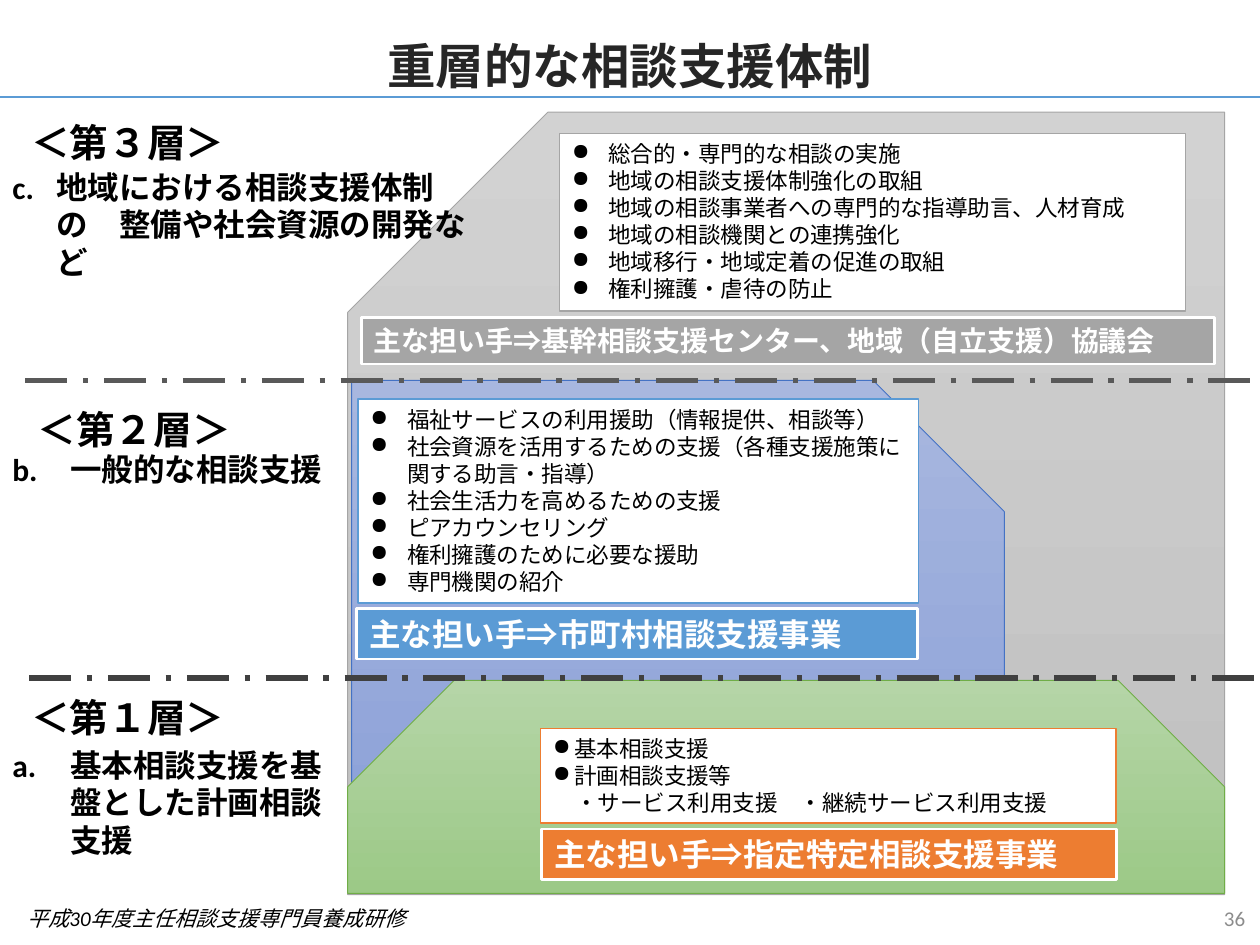
from lxml.etree import SubElement
from pptx import Presentation
from pptx.dml.color import RGBColor
from pptx.enum.dml import MSO_LINE
from pptx.enum.lang import MSO_LANGUAGE_ID
from pptx.enum.shapes import MSO_CONNECTOR, MSO_SHAPE
from pptx.enum.text import MSO_ANCHOR, MSO_AUTO_SIZE, PP_ALIGN
from pptx.oxml.ns import qn
from pptx.util import Pt

LATIN, JAPANESE = "Calibri", "Noto Sans CJK JP"
BLACK = RGBColor(0, 0, 0)
WHITE = RGBColor(255, 255, 255)
TITLE_INK = RGBColor(0x26, 0x26, 0x26)
PAGE_GRAY = RGBColor(0x8C, 0x8C, 0x8C)
GRAY = RGBColor(0xA5, 0xA5, 0xA5)
GRAY_TOP, GRAY_END = RGBColor(0xD2, 0xD2, 0xD2), RGBColor(0xC0, 0xC0, 0xC0)
BLUE = RGBColor(0x5B, 0x9B, 0xD5)
INDIGO = RGBColor(0x44, 0x72, 0xC4)
INDIGO_TOP, INDIGO_END = RGBColor(0xA8, 0xB7, 0xDF), RGBColor(0x88, 0x9E, 0xD7)
ORANGE = RGBColor(0xED, 0x7D, 0x31)
GREEN = RGBColor(0x70, 0xAD, 0x47)
GREEN_TOP, GREEN_END = RGBColor(0xB5, 0xD5, 0xA7), RGBColor(0x9C, 0xC9, 0x87)
DIVIDER_UPPER, DIVIDER_LOWER = RGBColor(0x59, 0x59, 0x59), RGBColor(0x40, 0x40, 0x40)

LAYERS = [
    dict(box=(198.7, 64.1, 501.1, 447.1), outline=MSO_SHAPE.SNIP_1_RECTANGLE,
         snips=[0.256], flipped=True, shades=(GRAY_TOP, GRAY_END), edge=GRAY,
         accent=GRAY, card=(121, 12.2, 357.8, 101.5), indent=21,
         duties=["総合的・専門的な相談の実施", "地域の相談支援体制強化の取組",
                 "地域の相談事業者への専門的な指導助言、人材育成",
                 "地域の相談機関との連携強化", "地域移行・地域定着の促進の取組",
                 "権利擁護・虐待の防止"],
         banner=(7.9, 117.4, 487.4, 26.6), banner_size=16,
         bearer="主な担い手⇒基幹相談支援センター、地域（自立支援）協議会"),
    dict(box=(200.9, 217.4, 373, 293), outline=MSO_SHAPE.SNIP_1_RECTANGLE,
         snips=[0.256], flipped=False, shades=(INDIGO_TOP, INDIGO_END), edge=INDIGO,
         accent=BLUE, card=(3.6, 10.8, 320.4, 116.6), indent=21,
         duties=["福祉サービスの利用援助（情報提供、相談等）",
                 "社会資源を活用するための支援（各種支援施策に関する助言・指導）",
                 "社会生活力を高めるための支援", "ピアカウンセリング",
                 "権利擁護のために必要な援助", "専門機関の紹介"],
         banner=(2.9, 130.4, 320.4, 28.8), banner_size=18,
         bearer="主な担い手⇒市町村相談支援事業"),
    dict(box=(198.7, 388.8, 501.1, 121.7), outline=MSO_SHAPE.SNIP_2_SAME_RECTANGLE,
         snips=[0.5, 0], flipped=False, shades=(GREEN_TOP, GREEN_END), edge=GREEN,
         accent=ORANGE, card=(110.2, 27.4, 329, 54), indent=12.2,
         duties=["基本相談支援", "計画相談支援等",
                 "　・サービス利用支援　・継続サービス利用支援"],
         banner=(110.9, 85, 328.3, 28.8), banner_size=18,
         bearer="主な担い手⇒指定特定相談支援事業"),
]

LABELS = [
    ((0, 64.1, 285.8, 79), 10.8, "＜第３層＞", 28.1, 25.2, 3,
     "地域における相談支援体制の　整備や社会資源の開発など"),
    ((0, 228.2, 198.7, 54), 14.4, "＜第２層＞", 25.2, 33.1, 2, "一般的な相談支援"),
    ((0, 393.1, 194.4, 102), 10.8, "＜第１層＞", 29.5, 33.1, 1,
     "基本相談支援を基盤とした計画相談支援"),
]


def points(box):
    """Convert a box of numbers to lengths."""
    return [Pt(value) for value in box]


def within(box, part):
    """Shift a part's box by the corner of the box that holds it."""
    return (box[0] + part[0], box[1] + part[1], part[2], part[3])


def write(holder, lines, size, color, bold=False, italic=False,
          align=PP_ALIGN.LEFT, anchor=MSO_ANCHOR.TOP, east_asian=LATIN):
    """Fill a shape with formatted lines and return its paragraphs."""
    frame = holder.text_frame
    frame.text = "\n".join(lines)
    frame.word_wrap = True
    frame.auto_size = MSO_AUTO_SIZE.NONE
    frame.vertical_anchor = anchor
    for paragraph in frame.paragraphs:
        paragraph.alignment = align
        for run in paragraph.runs:
            font = run.font
            font.name, font.size, font.bold, font.italic = LATIN, Pt(size), bold, italic
            font.color.rgb = color
            font.language_id = MSO_LANGUAGE_ID.JAPANESE
            latin = run._r.rPr.find(qn("a:latin"))
            script = SubElement(run._r.rPr, qn("a:ea"), typeface=east_asian)
            latin.addnext(script)
    return frame.paragraphs


def add_marker(paragraph, indent, tag, **settings):
    """Give a paragraph a hanging bullet or number."""
    properties = paragraph._p.get_or_add_pPr()
    properties.set("marL", str(Pt(indent)))
    properties.set("indent", str(-Pt(indent)))
    SubElement(properties, qn(tag), **settings)


def add_panel(slide, box, outline, edge, width):
    """Add an outlined shape without a shadow."""
    panel = slide.shapes.add_shape(outline, *points(box))
    panel.shadow.inherit = False
    panel.line.color.rgb = edge
    panel.line.width = Pt(width)
    return panel


def add_box(slide, box, color, edge, width):
    """Add a rectangle with a plain fill."""
    rectangle = add_panel(slide, box, MSO_SHAPE.RECTANGLE, edge, width)
    rectangle.fill.solid()
    rectangle.fill.fore_color.rgb = color
    return rectangle


def add_layer(slide, box, outline, snips, flipped, shades, edge, accent, card,
              indent, duties, banner, banner_size, bearer):
    """Add one layer with its list of duties and its bearer banner."""
    backdrop = add_panel(slide, box, outline, edge, 0.5)
    for index, snip in enumerate(snips):
        backdrop.adjustments[index] = snip
    if flipped:
        backdrop.element.spPr.xfrm.set("flipH", "1")
    backdrop.fill.gradient()
    backdrop.fill.gradient_angle = 270
    for stop, shade in zip(backdrop.fill.gradient_stops, shades):
        stop.color.rgb = shade

    duty_card = add_box(slide, within(box, card), WHITE, accent, 1)
    for paragraph in write(duty_card, duties, 12.9, BLACK):
        if not paragraph.text.startswith("　"):
            add_marker(paragraph, indent, "a:buChar", char="●")

    bearer_banner = add_box(slide, within(box, banner), accent, WHITE, 1.5)
    write(bearer_banner, [bearer], banner_size, WHITE, bold=True)


def add_label(slide, box, inset, heading, drop, indent, number, summary):
    """Add a layer's heading and its lettered summary at the left."""
    left, top, width, height = box
    name = slide.shapes.add_textbox(*points((left + inset, top, 140, 33.8)))
    write(name, [heading], 22.1, BLACK, bold=True)
    detail = slide.shapes.add_textbox(*points((left, top + drop, width, height - drop)))
    paragraph = write(detail, [summary], 18, BLACK, bold=True)[0]
    add_marker(paragraph, indent, "a:buAutoNum", type="alphaLcPeriod", startAt=str(number))


def add_rule(slide, left, top, color, width, dash=None):
    """Draw a horizontal line to the right edge of the slide."""
    rule = slide.shapes.add_connector(
        MSO_CONNECTOR.STRAIGHT, *points((left, top, 720, top)))
    rule.line.color.rgb = color
    rule.line.width = Pt(width)
    if dash:
        rule.line.dash_style = dash
    SubElement(rule.element.spPr, qn("a:effectLst"))


def add_title(slide, box):
    """Place the title and the rule below it."""
    title = slide.shapes.title
    title.left, title.top, title.width, title.height = points(box)
    heading = write(title, ["重層的な相談支援体制"], 27.7, TITLE_INK, bold=True,
                    align=PP_ALIGN.CENTER, anchor=MSO_ANCHOR.MIDDLE)[0]
    heading.line_spacing = 0.9
    add_rule(slide, 0, box[1] + 37.4, BLUE, 1.5)


def add_footer(slide, box):
    """Add the course name and the page number."""
    course = slide.shapes.add_textbox(*points(within(box, (0, 3.6, 283.7, 21.6))))
    write(course, ["平成30年度主任相談支援専門員養成研修"], 12, BLACK, italic=True,
          east_asian=JAPANESE)
    page = slide.shapes.add_textbox(*points(within(box, (box[2] - 162, 0, 162, 28.8))))
    write(page, ["36"], 12, PAGE_GRAY, align=PP_ALIGN.RIGHT, anchor=MSO_ANCHOR.MIDDLE)


def main():
    """Build and save the slide."""
    deck = Presentation()
    deck.slide_width, deck.slide_height = Pt(720), Pt(540)
    slide = deck.slides.add_slide(deck.slide_layouts[5])
    add_title(slide, (36, 18, 648, 43.2))
    for layer in LAYERS:
        add_layer(slide, **layer)
    for label in LABELS:
        add_label(slide, *label)
    add_rule(slide, 16.6, 387.4, DIVIDER_LOWER, 3, MSO_LINE.LONG_DASH_DOT)
    add_rule(slide, 14.4, 217.4, DIVIDER_UPPER, 3, MSO_LINE.LONG_DASH_DOT)
    add_footer(slide, (8.6, 510.5, 710, 28.8))
    deck.save("out.pptx")


if __name__ == "__main__":
    main()
